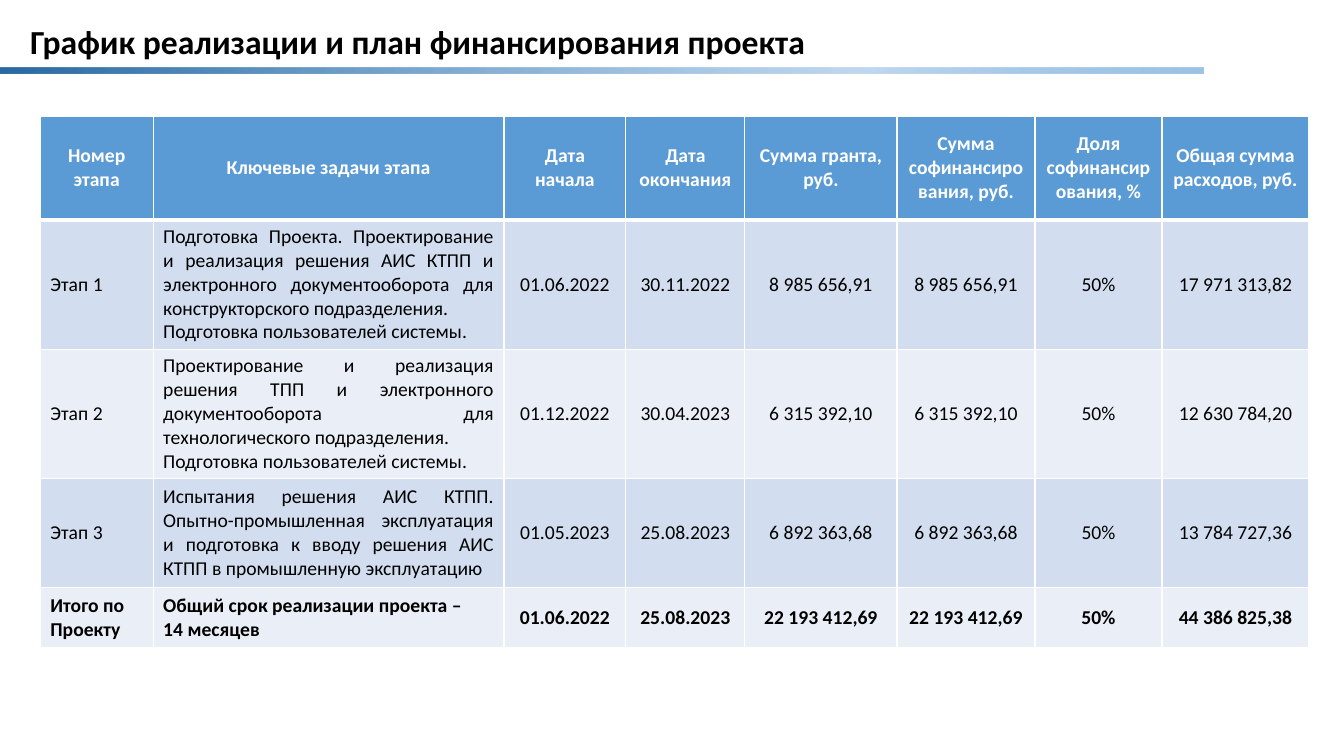
"""Build the project schedule and financing plan slide."""
from lxml import etree
from pptx import Presentation
from pptx.dml.color import RGBColor
from pptx.enum import shapes, text
from pptx.oxml import ns
from pptx.util import Pt

FONT = "Calibri"
BLACK = RGBColor(0x00, 0x00, 0x00)
WHITE = RGBColor(0xFF, 0xFF, 0xFF)
HEADER_BLUE = RGBColor(0x5B, 0x9B, 0xD5)
BANDS = (RGBColor(0xD2, 0xDE, 0xEF), RGBColor(0xEA, 0xEF, 0xF7))
RULE_DARK = RGBColor(0x2A, 0x69, 0xA2)
RULE_MID = RGBColor(0x66, 0xA2, 0xD8)
RULE_LIGHT = RGBColor(0x9D, 0xC3, 0xE6)
RULE_STOPS = ((0, RULE_DARK, 100), (72, RULE_MID, 41), (100, RULE_LIGHT, 100))

COL_WIDTHS = (80.6, 250.6, 87.1, 85, 108.7, 98.6, 90.7, 105.1)
ROW_HEIGHTS = (74.2, 92.4, 92.4, 77.8, 43.2)
LEFT, CENTER, JUSTIFY = (
    text.PP_ALIGN.LEFT, text.PP_ALIGN.CENTER, text.PP_ALIGN.JUSTIFY)
COL_ALIGNS = (LEFT, JUSTIFY) + (CENTER,) * 6

ROWS = (
    ("Номер этапа", "Ключевые задачи этапа", "Дата начала", "Дата окончания",
     "Сумма гранта, руб.", "Сумма софинансирования, руб.",
     "Доля софинансирования, %", "Общая сумма расходов, руб."),
    ("Этап 1",
     "Подготовка Проекта. Проектирование и реализация решения АИС КТПП и "
     "электронного документооборота для конструкторского подразделения.\n"
     "Подготовка пользователей системы.",
     "01.06.2022", "30.11.2022", "8 985 656,91", "8 985 656,91", "50%",
     "17 971 313,82"),
    ("Этап 2",
     "Проектирование и реализация решения ТПП и электронного "
     "документооборота для технологического подразделения.\n"
     "Подготовка пользователей системы.",
     "01.12.2022", "30.04.2023", "6 315 392,10", "6 315 392,10", "50%",
     "12 630 784,20"),
    ("Этап 3",
     "Испытания решения АИС КТПП. Опытно-промышленная эксплуатация и "
     "подготовка к вводу решения АИС КТПП в промышленную эксплуатацию",
     "01.05.2023", "25.08.2023", "6 892 363,68", "6 892 363,68", "50%",
     "13 784 727,36"),
    ("Итого по Проекту", "Общий срок реализации проекта –\n14 месяцев",
     "01.06.2022", "25.08.2023", "22 193 412,69", "22 193 412,69", "50%",
     "44 386 825,38"),
)


def write(tf, content, size, color, bold, align, spacing=None):
    """Write one paragraph per line of content."""
    for i, line in enumerate(content.split("\n")):
        p = tf.add_paragraph() if i else tf.paragraphs[0]
        p.alignment = align
        p.line_spacing = spacing
        r = p.add_run()
        r.text = line
        r.font.name = FONT
        r.font.size = Pt(size)
        r.font.bold = bold
        r.font.color.rgb = color


def add_title(slide, content):
    """Add the slide title."""
    sp = slide.shapes.add_textbox(Pt(14.4), Pt(10.8), Pt(825), Pt(40.3))
    tf = sp.text_frame
    tf.word_wrap = True
    tf.vertical_anchor = text.MSO_ANCHOR.MIDDLE
    write(tf, content, 24, BLACK, True, LEFT, 0.9)


def add_title_rule(slide):
    """Add the gradient bar under the title."""
    sp = slide.shapes.add_shape(
        shapes.MSO_SHAPE.ROUNDED_RECTANGLE, 0, Pt(48.2), Pt(859.7), Pt(4.3))
    sp.shadow.inherit = False
    sp.line.fill.background()
    sp.fill.gradient()
    sp.fill.gradient_angle = 0
    stops = sp.element.spPr.find(".//" + ns.qn("a:gsLst"))
    for gs in list(stops):
        stops.remove(gs)
    for position, color, opacity in RULE_STOPS:
        gs = etree.SubElement(stops, ns.qn("a:gs"), pos=str(position * 1000))
        clr = etree.SubElement(gs, ns.qn("a:srgbClr"), val=str(color))
        etree.SubElement(clr, ns.qn("a:alpha"), val=str(opacity * 1000))


def set_borders(cell, top, bottom):
    """Give a cell white borders of the given top and bottom widths."""
    tc_pr = cell._tc.get_or_add_tcPr()
    for side, width in (("L", 1), ("R", 1), ("T", top), ("B", bottom)):
        ln = etree.SubElement(tc_pr, ns.qn("a:ln" + side), w=str(Pt(width)))
        fill = etree.SubElement(ln, ns.qn("a:solidFill"))
        etree.SubElement(fill, ns.qn("a:srgbClr"), val=str(WHITE))


def add_plan_table(slide):
    """Add the table of stages, dates and sums."""
    table = slide.shapes.add_table(
        len(ROWS), len(COL_WIDTHS), Pt(28.8), Pt(82.8),
        Pt(sum(COL_WIDTHS)), Pt(sum(ROW_HEIGHTS))).table
    for column, width in zip(table.columns, COL_WIDTHS):
        column.width = Pt(width)
    for i, (row, height) in enumerate(zip(table.rows, ROW_HEIGHTS)):
        row.height = Pt(height)
        header = i == 0
        bold = header or i == len(ROWS) - 1
        for cell, content, align in zip(row.cells, ROWS[i], COL_ALIGNS):
            set_borders(cell, 3 if i == 1 else 1, 3 if header else 1)
            cell.fill.solid()
            cell.fill.fore_color.rgb = (
                HEADER_BLUE if header else BANDS[(i - 1) % 2])
            cell.vertical_anchor = text.MSO_ANCHOR.MIDDLE
            write(cell.text_frame, content, 14, WHITE if header else BLACK,
                  bold, CENTER if header else align)


def main():
    """Build and save the slide."""
    prs = Presentation()
    prs.slide_width, prs.slide_height = Pt(960), Pt(540)
    slide = prs.slides.add_slide(prs.slide_layouts[6])
    add_title(slide, "График реализации и план финансирования проекта")
    add_title_rule(slide)
    add_plan_table(slide)
    prs.save("out.pptx")


if __name__ == "__main__":
    main()
